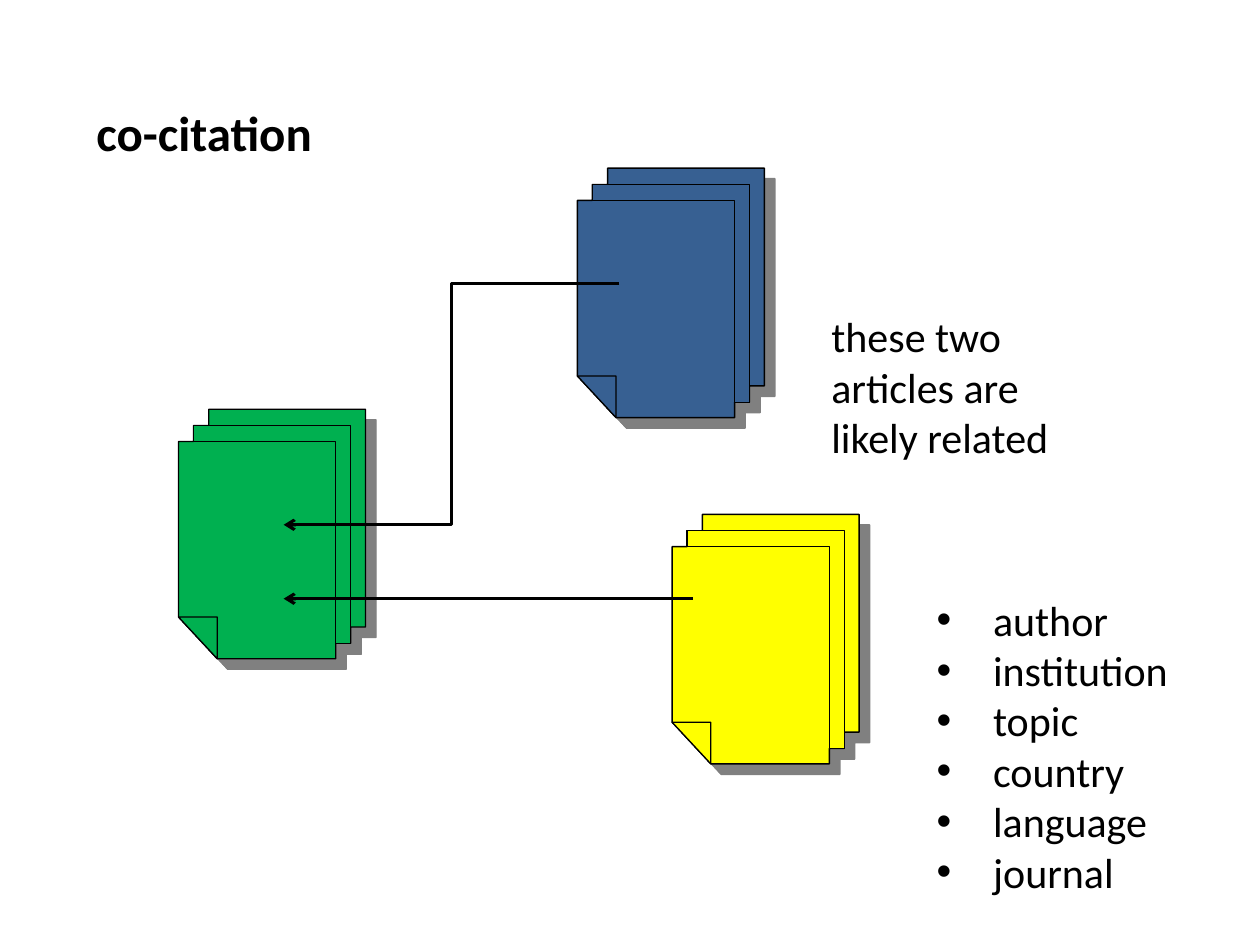
"""Build the co-citation slide: three article stacks, two citation arrows and notes."""
from copy import deepcopy
from dataclasses import dataclass

from lxml.etree import SubElement
from pptx import Presentation
from pptx.dml.color import RGBColor
from pptx.enum.shapes import MSO_CONNECTOR
from pptx.enum.text import MSO_ANCHOR, MSO_AUTO_SIZE, PP_ALIGN
from pptx.oxml.ns import qn
from pptx.slide import Slide
from pptx.text.text import TextFrame
from pptx.util import Cm, Pt


@dataclass(frozen=True)
class Theme:
    """Colours, font and sizes of the slide."""
    ink: RGBColor = RGBColor(0, 0, 0)
    blue: RGBColor = RGBColor(0x37, 0x60, 0x92)
    green: RGBColor = RGBColor(0, 0xB0, 0x50)
    yellow: RGBColor = RGBColor(0xFF, 0xFF, 0)
    shadow: str = "808080"
    font: str = "Calibri"
    title: Pt = Pt(28)
    body: Pt = Pt(24)
    outline: Pt = Pt(0.75)
    arrow: Pt = Pt(1.75)


@dataclass(frozen=True)
class Stack:
    """A stack of articles, placed in centimetres."""
    x: float
    y: float
    fill: RGBColor


@dataclass(frozen=True)
class Citation:
    """An elbow arrow between two points, in centimetres."""
    x1: float
    y1: float
    x2: float
    y2: float


@dataclass(frozen=True)
class Note:
    """A text box, placed in centimetres."""
    x: float
    y: float
    w: float
    h: float
    lines: tuple[str, ...]
    bulleted: bool = False


THEME = Theme()
STACKS = (
    Stack(11.64, 3.39, THEME.blue),
    Stack(3.6, 8.25, THEME.green),
    Stack(13.55, 10.37, THEME.yellow),
)
CITATIONS = (
    Citation(13.97, 12.07, 5.72, 12.07),
    Citation(12.49, 5.72, 5.72, 10.58),
)
NOTES = (
    Note(18.63, 11.85, 6.35, 6.4,
         ("author", "institution", "topic", "country", "language", "journal"), True),
    Note(16.51, 6.14, 5.72, 3.33, ("these two articles are likely related",)),
)
OUTLINE = ((0, 419), (0, 65), (30, 65), (30, 33), (61, 33), (61, 0), (377, 0), (377, 439),
           (347, 439), (347, 472), (317, 472), (317, 503), (78, 503))
MIDDLE_PAGE = ((61, 33), (347, 33), (347, 472), (317, 472), (317, 65), (30, 65), (30, 33))
FOLD = ((0, 419), (78, 419), (78, 503))


def add_stack(s: Slide, stack: Stack) -> None:
    """Draw a stack as one freeform with a separate path for each page edge."""
    fb = s.shapes.build_freeform(*OUTLINE[0], scale=Cm(0.01))
    fb.add_line_segments(OUTLINE[1:], close=True)
    for points in (MIDDLE_PAGE, FOLD):
        fb.move_to(*points[0])
        fb.add_line_segments(points[1:], close=True)
    sp = fb.convert_to_shape(Cm(stack.x), Cm(stack.y))
    sp.fill.solid()
    sp.fill.fore_color.rgb = stack.fill
    sp.line.color.rgb = THEME.ink
    sp.line.width = THEME.outline
    split_contours(sp.element.spPr.find(".//" + qn("a:pathLst")))
    sp.shadow.inherit = False
    effects = sp.element.spPr.find(qn("a:effectLst"))
    shadow = SubElement(effects, qn("a:outerShdw"), dist=str(Pt(8.5)), dir="2700000",
                        algn="ctr", rotWithShape="0")
    SubElement(shadow, qn("a:srgbClr"), val=THEME.shadow)


def split_contours(path_list) -> None:
    """Give each contour its own path so that overlaps stay filled."""
    whole = path_list[0]
    for step in list(whole):
        if step.tag == qn("a:moveTo"):
            contour = deepcopy(whole)
            for child in list(contour):
                contour.remove(child)
            path_list.append(contour)
        contour.append(step)
    path_list.remove(whole)


def add_citation(s: Slide, c: Citation) -> None:
    """Draw an elbow connector with an open arrowhead."""
    cx = s.shapes.add_connector(MSO_CONNECTOR.ELBOW, Cm(c.x1), Cm(c.y1), Cm(c.x2), Cm(c.y2))
    cx.line.color.rgb = THEME.ink
    cx.line.width = THEME.arrow
    spPr = cx.element.spPr
    SubElement(spPr.find(qn("a:ln")), qn("a:tailEnd"), type="arrow")
    SubElement(spPr, qn("a:effectLst"))


def write_lines(tf: TextFrame, lines: tuple[str, ...], size: Pt, bold: bool = False,
                bulleted: bool = False) -> None:
    """Write one formatted paragraph per line."""
    tf.word_wrap = True
    tf.auto_size = MSO_AUTO_SIZE.SHAPE_TO_FIT_TEXT
    tf.vertical_anchor = MSO_ANCHOR.TOP
    for i, text in enumerate(lines):
        p = tf.add_paragraph() if i else tf.paragraphs[0]
        p.alignment = PP_ALIGN.LEFT
        if bulleted:
            pPr = p._p.get_or_add_pPr()
            pPr.set("marL", str(Cm(1.14)))
            pPr.set("indent", str(-Cm(1.14)))
            SubElement(pPr, qn("a:buFont"), typeface="Arial")
            SubElement(pPr, qn("a:buChar"), char="•")
        r = p.add_run()
        r.text = text
        r.font.name = THEME.font
        r.font.size = size
        r.font.bold = bold
        r.font.color.rgb = THEME.ink


def add_note(s: Slide, note: Note) -> None:
    """Add a text box holding a note."""
    sp = s.shapes.add_textbox(Cm(note.x), Cm(note.y), Cm(note.w), Cm(note.h))
    write_lines(sp.text_frame, note.lines, THEME.body, bulleted=note.bulleted)


def main() -> None:
    """Build and save the slide."""
    prs = Presentation()
    prs.slide_width, prs.slide_height = Cm(25.4), Cm(19.05)
    s = prs.slides.add_slide(prs.slide_layouts[5])
    title = s.shapes.title
    title.left, title.top, title.width, title.height = Cm(1.69), Cm(1.93), Cm(5.93), Cm(1.45)
    write_lines(title.text_frame, ("co-citation",), THEME.title, bold=True)
    for stack in STACKS:
        add_stack(s, stack)
    for citation in CITATIONS:
        add_citation(s, citation)
    for note in NOTES:
        add_note(s, note)
    prs.save("out.pptx")


if __name__ == "__main__":
    main()
